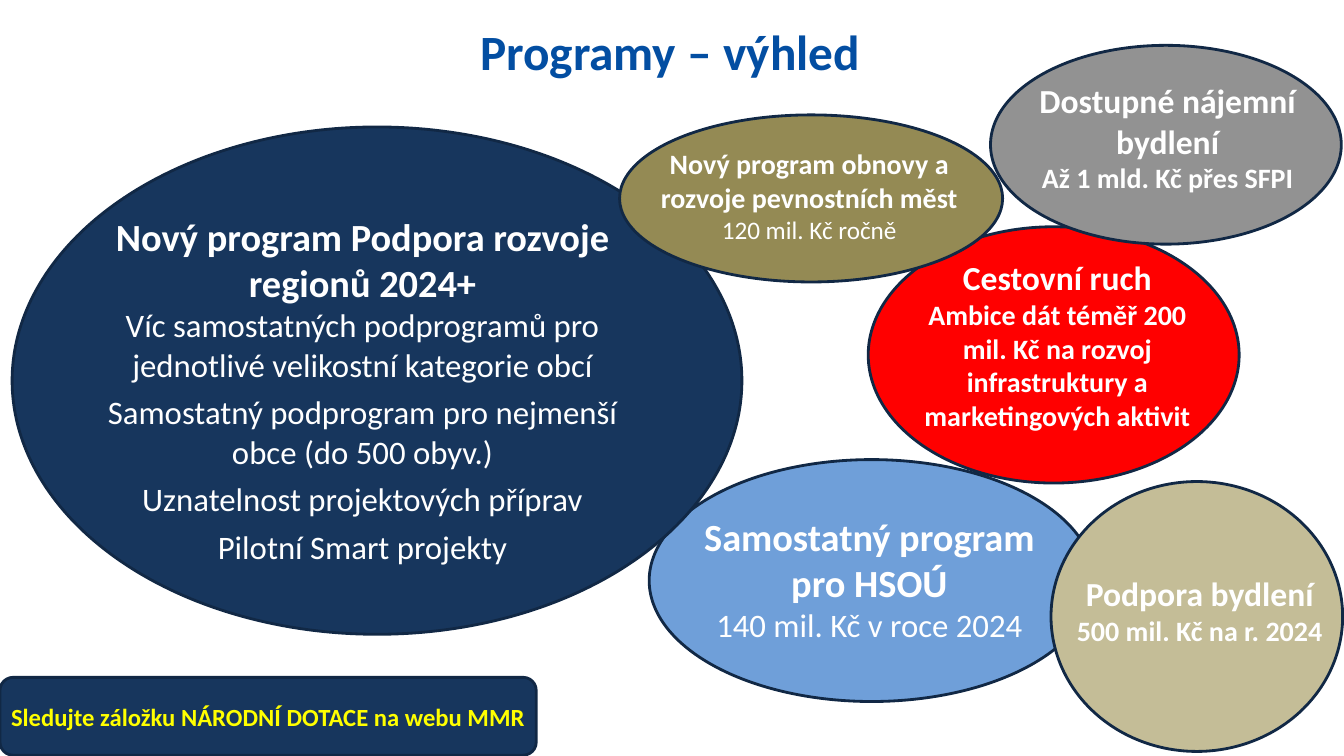
from dataclasses import dataclass

from pptx import Presentation
from pptx.dml.color import RGBColor
from pptx.enum.shapes import MSO_SHAPE
from pptx.enum.text import MSO_ANCHOR, PP_ALIGN
from pptx.util import Inches, Pt

ELLIPSE, ROUNDED = MSO_SHAPE.OVAL, MSO_SHAPE.ROUNDED_RECTANGLE
CENTER = PP_ALIGN.CENTER
TOP, MIDDLE = MSO_ANCHOR.TOP, MSO_ANCHOR.MIDDLE
SLIDE_W, SLIDE_H = Inches(13.33), Inches(7.5)


@dataclass(frozen=True)
class Theme:
    font: str = "Calibri"
    title: str = "034EA2"
    outline: str = "112845"
    light: str = "FFFFFF"
    highlight: str = "FFFF00"
    navy: str = "17365D"
    blue: str = "6F9FD9"
    sand: str = "C4BD97"
    red: str = "FF0000"
    olive: str = "948A54"
    grey: str = "929292"
    title_size: float = 35.2
    large: float = 27.4
    heading: float = 24
    body: float = 23.4
    small: float = 20
    detail: float = 18
    note: float = 17.6
    gap: float = 5.9
    line_width: float = 2


THEME = Theme()


def on_slide(x, y, w, h):
    """Turn percentages of the slide into a box in slide units."""
    return tuple(int(share * side / 100) for share, side in
                 zip((x, y, w, h), (SLIDE_W, SLIDE_H) * 2))


def within(box, x, y, w, h):
    """Turn shares of a box into a smaller box."""
    left, top, width, height = box
    return (int(left + x * width), int(top + y * height),
            int(w * width), int(h * height))


def write(frame, text, size, color=THEME.light, bold=True, after=0, spacing=1.0):
    """Add one centred paragraph, filling the empty first one if there is one."""
    first = frame.paragraphs[0]
    paragraph = frame.add_paragraph() if first.runs else first
    paragraph.alignment = CENTER
    paragraph.space_after = Pt(after)
    paragraph.line_spacing = spacing
    run = paragraph.add_run()
    run.text = text
    run.font.name = THEME.font
    run.font.size = Pt(size)
    run.font.bold = bold
    run.font.color.rgb = RGBColor.from_string(color)


def add_text_frame(slide, box):
    frame = slide.shapes.add_textbox(*box).text_frame
    frame.word_wrap = True
    frame.vertical_anchor = TOP
    return frame


def add_outlined(slide, kind, box, fill):
    shape = slide.shapes.add_shape(kind, *box)
    shape.shadow.inherit = False
    shape.fill.solid()
    shape.fill.fore_color.rgb = RGBColor.from_string(fill)
    shape.line.color.rgb = RGBColor.from_string(THEME.outline)
    shape.line.width = Pt(THEME.line_width)
    return shape


def add_title(slide, box):
    write(add_text_frame(slide, box), "Programy – výhled", THEME.title_size,
          color=THEME.title, spacing=0.9)


def add_program(slide, box, fill, text_area, heading, details):
    """Draw a programme bubble; heading and details are arguments of write."""
    add_outlined(slide, ELLIPSE, box, fill)
    frame = add_text_frame(slide, within(box, *text_area))
    heading_text, heading_size = heading
    write(frame, heading_text, heading_size)
    lines, detail_format = details
    for line in lines:
        write(frame, line, **detail_format)


def add_note(slide, box):
    frame = add_outlined(slide, ROUNDED, box, THEME.navy).text_frame
    frame.word_wrap = True
    frame.vertical_anchor = MIDDLE
    frame.margin_left = frame.margin_right = Inches(0.02)
    write(frame, "Sledujte záložku NÁRODNÍ DOTACE na webu MMR", THEME.note,
          color=THEME.highlight)


STRONG = dict(size=THEME.small)
PLAIN = dict(size=THEME.body, bold=False)
LISTED = dict(PLAIN, after=THEME.gap)
FINE = dict(size=THEME.detail, bold=False)

# Box in % of the slide, fill, text area in shares of the box, heading, details
PROGRAMS = [
    ((48.3, 60.8, 33.1, 32), THEME.blue, (0.07, 0.2, 0.85, 0.59),
     ("Samostatný program pro HSOÚ", THEME.large),
     (["140 mil. Kč v roce 2024"], PLAIN)),
    ((78.2, 63.7, 21.7, 35.7), THEME.sand, (0.02, 0.32, 0.98, 0.31),
     ("Podpora bydlení", THEME.heading),
     (["500 mil. Kč na r. 2024"], STRONG)),
    ((64.6, 30, 27.6, 33.9), THEME.red, (0.11, 0.1, 0.8, 0.86),
     ("Cestovní ruch", THEME.heading),
     (["Ambice dát téměř 200 mil. Kč na rozvoj infrastruktury "
       "a marketingových aktivit"], STRONG)),
    ((0.9, 16.8, 54.3, 67.1), THEME.navy, (0.07, 0.16, 0.82, 0.72),
     ("Nový program Podpora rozvoje regionů 2024+", THEME.large),
     (["Víc samostatných podprogramů pro jednotlivé velikostní kategorie obcí",
       "Samostatný podprogram pro nejmenší obce (do 500 obyv.)",
       "Uznatelnost projektových příprav",
       "Pilotní Smart projekty"], LISTED)),
    ((46.1, 15.2, 28.5, 22.1), THEME.olive, (0, 0.16, 0.99, 0.65),
     ("Nový program obnovy a rozvoje pevnostních měst", THEME.small),
     (["120 mil. Kč ročně"], FINE)),
    ((73.7, 6, 26.1, 26.3), THEME.grey, (0.05, 0.15, 0.91, 0.8),
     ("Dostupné nájemní bydlení", THEME.heading),
     (["Až 1 mld. Kč přes SFPI"], STRONG)),
]


def main():
    deck = Presentation()
    deck.slide_width, deck.slide_height = SLIDE_W, SLIDE_H
    slide = deck.slides.add_slide(deck.slide_layouts[6])
    add_title(slide, on_slide(5.9, 3.1, 87.9, 13.2))
    for area, *program in PROGRAMS:
        add_program(slide, on_slide(*area), *program)
    add_note(slide, on_slide(0, 89.6, 39.9, 10.3))
    deck.save("out.pptx")


if __name__ == "__main__":
    main()
